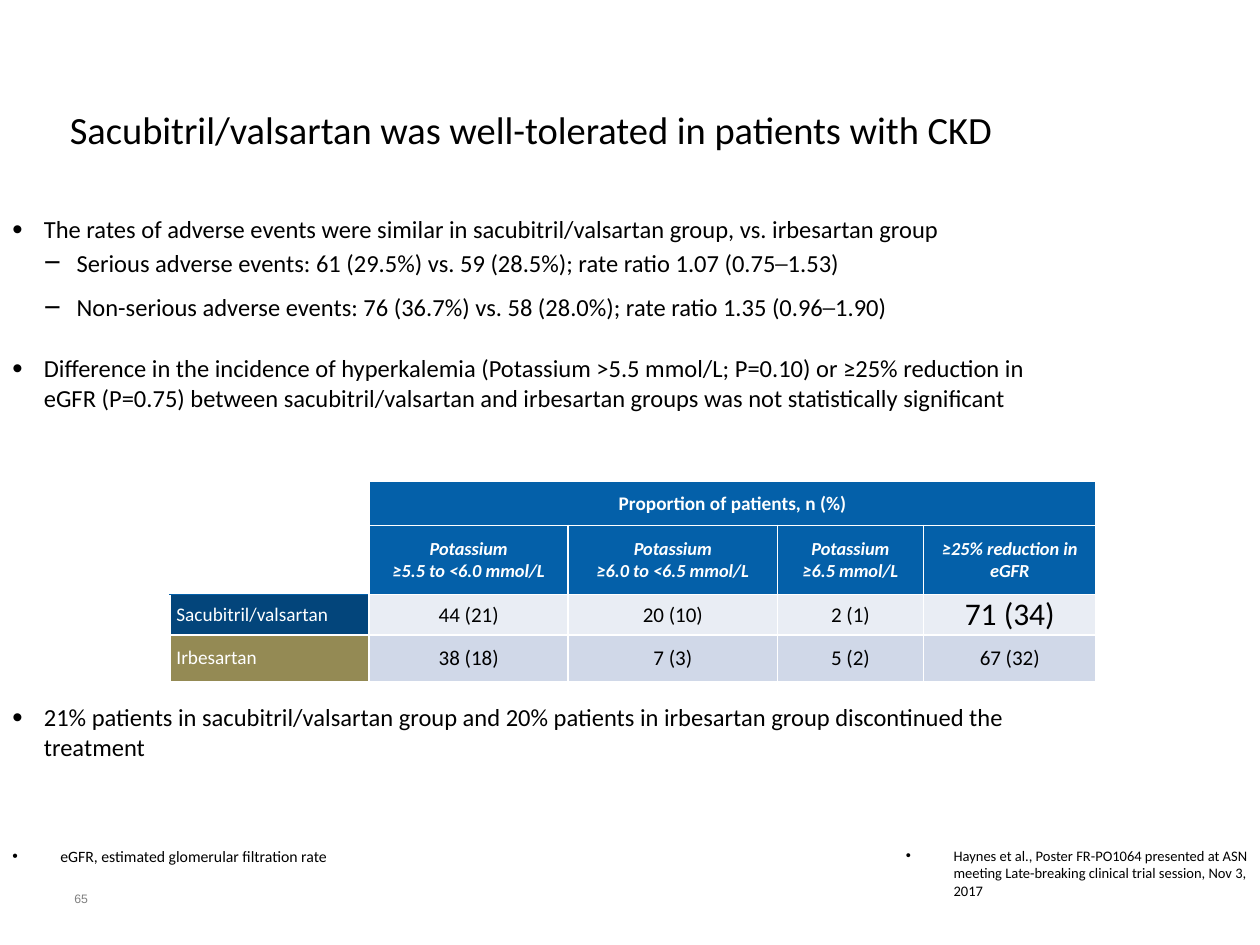
from lxml import etree
from pptx import Presentation
from pptx import util as u
from pptx.dml.color import RGBColor
from pptx.enum import text
from pptx.oxml import ns

MID = text.MSO_ANCHOR.MIDDLE
CENTER = text.PP_ALIGN.CENTER
BLUE, NAVY, OLIVE, WHITE, BLACK = "0460A9", "03457B", "948A54", "FFFFFF", "000000"
POINTS = [
    ("The rates of adverse events were similar in sacubitril/valsartan group, vs. irbesartan group", 0, 0),
    ("Serious adverse events: 61 (29.5%) vs. 59 (28.5%); rate ratio 1.07 (0.75─1.53)", 1, 2.5),
    ("Non-serious adverse events: 76 (36.7%) vs. 58 (28.0%); rate ratio 1.35 (0.96─1.90)", 1, 2.5),
    ("Difference in the incidence of hyperkalemia (Potassium >5.5 mmol/L; P=0.10) or ≥25% reduction in "
     "eGFR (P=0.75) between sacubitril/valsartan and irbesartan groups was not statistically significant", 0, 12),
    ("21% patients in sacubitril/valsartan group and 20% patients in irbesartan group discontinued the "
     "treatment", 0, 166),
]
HEADS = ["Potassium\n≥5.5 to <6.0 mmol/L", "Potassium\n≥6.0 to <6.5 mmol/L",
         "Potassium\n≥6.5 mmol/L", "≥25% reduction in eGFR"]
GROUPS = [
    ("Sacubitril/valsartan", NAVY, "E9EDF4", ["44 (21)", "20 (10)", "2 (1)", "71 (34)"]),
    ("Irbesartan", OLIVE, "D0D8E8", ["38 (18)", "7 (3)", "5 (2)", "67 (32)"]),
]
COLS = [1.58, 1.58, 1.66, 1.16, 1.37]
ROWS = [0.35, 0.55, 0.32, 0.37]


def color(code):
    """Turn a hex string into a colour."""
    return RGBColor.from_string(code)


def style(para, size, code=BLACK, face="Calibri", bold=False, slant=False):
    """Set the font of a paragraph."""
    font = para.font
    font.size, font.name, font.bold, font.italic = u.Pt(size), face, bold, slant
    font.color.rgb = color(code)


def bullet(para, mark, left, hang, scale=100):
    """Give a paragraph a bullet with a hanging indent."""
    props = para._p.get_or_add_pPr()
    props.set("marL", str(u.Inches(left)))
    props.set("indent", str(-u.Inches(hang)))
    etree.SubElement(props, ns.qn("a:buSzPct")).set("val", str(scale * 1000))
    etree.SubElement(props, ns.qn("a:buFont")).set("typeface", "Arial")
    etree.SubElement(props, ns.qn("a:buChar")).set("char", mark)


def frame(slide, left, top, width, height):
    """Add a wrapping text box and return its text frame."""
    box = slide.shapes.add_textbox(*map(u.Inches, (left, top, width, height)))
    box.text_frame.word_wrap = True
    return box.text_frame


def title(slide, *box):
    """Place the slide title."""
    body = frame(slide, *box)
    body.vertical_anchor = MID
    para = body.paragraphs[0]
    para.text = "Sacubitril/valsartan was well-tolerated in patients with CKD "
    para.alignment = CENTER
    style(para, 22)


def points(slide, *box):
    """Place the bulleted findings."""
    body = frame(slide, *box)
    for i, (words, level, gap) in enumerate(POINTS):
        para = body.add_paragraph() if i else body.paragraphs[0]
        para.text, para.level = words, level
        if gap:
            para.space_before = u.Pt(gap)
        if level:
            para.space_after = u.Pt(6)
            bullet(para, "−", 0.51, 0.26, 120)
        else:
            bullet(para, "•", 0.25, 0.25, 120)
        style(para, 14)


def note(slide, words, size, *box):
    """Place a bulleted footnote."""
    para = frame(slide, *box).paragraphs[0]
    para.text = words
    bullet(para, "•", 0.38, 0.38)
    style(para, size)


def number(slide, *box):
    """Place the slide number."""
    body = frame(slide, *box)
    body.margin_left = body.margin_right = body.margin_top = body.margin_bottom = 0
    body.vertical_anchor = MID
    para = body.paragraphs[0]
    para.text = "65"
    style(para, 7, "7F7F7F", "Arial")


def border(cell, **edges):
    """Draw white cell borders, or the colours given by edge."""
    props = cell._tc.get_or_add_tcPr()
    for i, edge in enumerate("LRTB"):
        line = etree.Element(ns.qn(f"a:ln{edge}"), w=str(u.Pt(1)))
        fill = etree.SubElement(line, ns.qn("a:solidFill"))
        etree.SubElement(fill, ns.qn("a:srgbClr")).set("val", edges.get(edge, WHITE))
        props.insert(i, line)


def fill(cell, words, back, size, code=WHITE, align=CENTER, **looks):
    """Write and colour one table cell."""
    cell.fill.solid()
    cell.fill.fore_color.rgb = color(back)
    cell.vertical_anchor = MID
    cell.margin_left = cell.margin_right = u.Inches(0.05)
    cell.margin_top = cell.margin_bottom = 0
    cell.text = words
    for para in cell.text_frame.paragraphs:
        para.alignment = align
        style(para, size, code, **looks)


def table(slide, left, top):
    """Place the table of patient proportions."""
    box = map(u.Inches, (left, top, sum(COLS), sum(ROWS)))
    grid = slide.shapes.add_table(len(ROWS), len(COLS), *box).table
    for col, width in zip(grid.columns, COLS):
        col.width = u.Inches(width)
    for row, height in zip(grid.rows, ROWS):
        row.height = u.Inches(height)
    for r in range(2):
        fill(grid.cell(r, 0), "", WHITE, 10)
    fill(grid.cell(0, 1), "Proportion of patients, n (%)", BLUE, 11, bold=True)
    for c, head in enumerate(HEADS, 1):
        fill(grid.cell(1, c), head, BLUE, 10.5, bold=True, slant=True)
    for r, (name, tone, pale, values) in enumerate(GROUPS, 2):
        fill(grid.cell(r, 0), name, tone, 11, align=text.PP_ALIGN.LEFT)
        for c, value in enumerate(values, 1):
            fill(grid.cell(r, c), value, pale, 18 if value == "71 (34)" else 12, BLACK)
    for r in range(len(ROWS)):
        for c in range(len(COLS)):
            edges = {1: {"B": BLUE}, 2: {"T": BLUE}}.get(r, {}) if c == 0 else {}
            border(grid.cell(r, c), **edges)
    grid.cell(0, 0).merge(grid.cell(1, 0))
    grid.cell(0, 1).merge(grid.cell(0, 4))


def main():
    """Build and save the slide."""
    deck = Presentation()
    deck.slide_width, deck.slide_height = u.Inches(10), u.Inches(7.5)
    slide = deck.slides.add_slide(deck.slide_layouts[6])
    number(slide, 0.59, 7, 0.44, 0.27)
    title(slide, 0, 0.5, 8.5, 1.05)
    points(slide, 0, 1.65, 8.5, 4.95)
    note(slide, "Haynes et al., Poster FR-PO1064 presented at ASN meeting Late-breaking clinical trial "
         "session, Nov 3, 2017", 8.3, 7.09, 6.67, 2.91, 0.5)
    note(slide, "eGFR, estimated glomerular filtration rate", 9, 0, 6.67, 3.59, 0.5)
    table(slide, 1.35, 3.82)
    deck.save("out.pptx")


if __name__ == "__main__":
    main()
